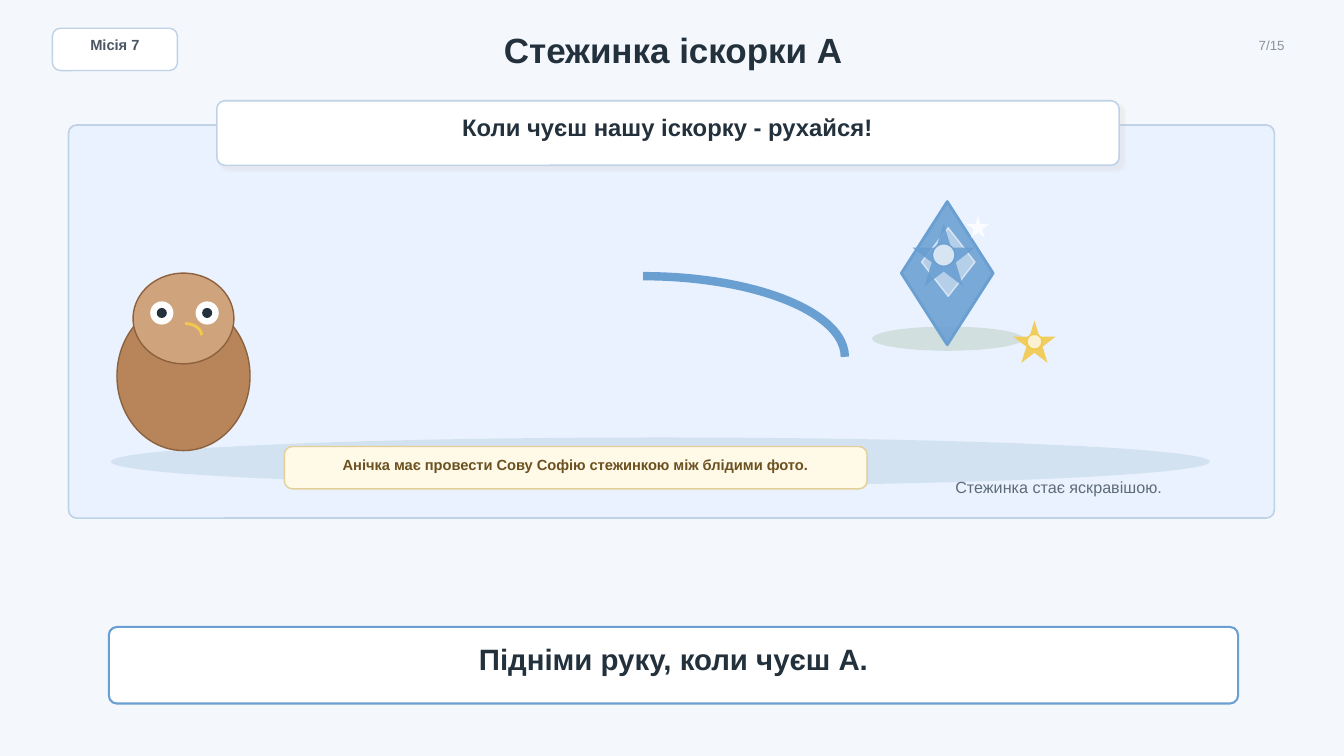
"""Builds the mission slide with an owl, a spark path and a crystal."""
from dataclasses import dataclass

from lxml.etree import SubElement
from pptx import Presentation
from pptx.dml.color import RGBColor
from pptx.enum.shapes import MSO_SHAPE
from pptx.enum.text import MSO_ANCHOR, PP_ALIGN
from pptx.oxml.ns import qn
from pptx.util import Inches, Pt


@dataclass(frozen=True)
class Theme:
    font: str = "Arial"
    page: str = "F4F7FC"
    white: str = "FFFFFF"
    ink: str = "23313D"
    badge: str = "4B5563"
    muted: str = "8A929A"
    caption: str = "5E6C78"
    edge: str = "BFD2E6"
    panel: str = "EAF2FF"
    ground: str = "D2E1EF"
    shade: str = "C9D9D5"
    spark: str = "6A9FD2"
    gold: str = "F2C94C"
    body: str = "B8845A"
    head: str = "CFA47C"
    feather: str = "8C623E"
    note: str = "FFF9E8"
    note_edge: str = "E4CF98"
    note_ink: str = "6B5120"
    shadow: str = "C8C1B0"
    title_size: float = 25
    task_size: float = 21
    prompt_size: float = 17
    caption_size: float = 11.5
    small_size: float = 10.5
    number_size: float = 9.5


THEME = Theme()
CELL = Inches(0.1)
COLUMNS, ROWS = 133.3, 75
CORNER = 0.8
OVAL, DIAMOND = MSO_SHAPE.OVAL, MSO_SHAPE.DIAMOND
STAR, ARC = MSO_SHAPE.STAR_5_POINT, MSO_SHAPE.ARC

BADGE = (5.2, 2.8, 12.4, 4.2)
PANEL = (6.8, 12.4, 119.6, 39)
PROMPT = (21.5, 10, 89.5, 6.4)
NOTE = (28.2, 44.3, 57.8, 4.2)
TASK = (10.8, 62.2, 112, 7.6)

TEXTS = [
    ("Місія 7", (6.2, 3.7, 10.4, 1.5),
     dict(size=THEME.small_size, color=THEME.badge, bold=True)),
    ("Стежинка іскорки А", (20, 2.5, 93.5, 4.8),
     dict(size=THEME.title_size, color=THEME.ink, bold=True)),
    ("7/15", (120.2, 3.7, 7.2, 1.6),
     dict(size=THEME.number_size, color=THEME.muted, align=PP_ALIGN.RIGHT)),
    ("Коли чуєш нашу іскорку - рухайся!", (23.8, 11.3, 84.8, 2.6),
     dict(size=THEME.prompt_size, color=THEME.ink, bold=True)),
    ("Анічка має провести Сову Софію стежинкою між блідими фото.",
     (29.8, 45.2, 54.6, 1.8),
     dict(size=THEME.small_size, color=THEME.note_ink, bold=True)),
    ("Підніми руку, коли чуєш А.", (13.4, 63.9, 106.8, 2.8),
     dict(size=THEME.task_size, color=THEME.ink, bold=True)),
    ("Стежинка стає яскравішою.", (90, 47.2, 30, 2.2),
     dict(size=THEME.caption_size, color=THEME.caption)),
]

OWL = [
    (OVAL, (11.6, 29.9, 13.2, 14.8), dict(fill=THEME.body, line=THEME.feather)),
    (OVAL, (13.2, 27.1, 10, 9), dict(fill=THEME.head, line=THEME.feather)),
]
EYE_CENTERS = [(16.05, 31.05), (20.55, 31.05)]
EYE_LAYERS = [(2.3, THEME.white), (1, THEME.ink)]
PATH = [
    (ARC, (16.7, 32.1, 3.3, 2.3), dict(line=THEME.gold, width=2)),
    (ARC, (43.8, 27.4, 40, 16), dict(line=THEME.spark, width=6)),
]
CRYSTAL = [
    (OVAL, (86.5, 32.4, 15, 2.4), dict(fill=THEME.shade, opacity=75)),
    (DIAMOND, (89.4, 20, 9.1, 14.2),
     dict(fill=THEME.spark, opacity=88, line=THEME.spark, width=2)),
    (DIAMOND, (91.4, 22.6, 5.3, 6.8),
     dict(fill=THEME.white, opacity=45, line=THEME.white, line_opacity=60)),
    (STAR, (95.9, 21.4, 2.2, 2.2), dict(fill=THEME.white, opacity=82)),
]
SPARKS = [((93.6, 25.3), 6.2, THEME.spark), ((102.6, 33.9), 4.2, THEME.gold)]
GLOW_SHARE = 0.36


def cells(at):
    return [round(value * CELL) for value in at]


def centered(center, size):
    return center[0] - size / 2, center[1] - size / 2, size, size


def paint(fill, color, opacity):
    fill.solid()
    fill.fore_color.rgb = RGBColor.from_string(color)
    if opacity < 100:
        choice = fill._xPr.find(qn("a:solidFill"))[0]
        SubElement(choice, qn("a:alpha"), val=str(opacity * 1000))


def add_figure(page, preset, at, fill=None, opacity=100, line=None, width=1, line_opacity=100):
    figure = page.shapes.add_shape(preset, *cells(at))
    figure.shadow.inherit = False
    if fill:
        paint(figure.fill, fill, opacity)
    else:
        figure.fill.background()
    if line:
        paint(figure.line.fill, line, line_opacity)
        figure.line.width = Pt(width)
    else:
        figure.line.fill.background()
    return figure


def add_card(page, at, **style):
    card = add_figure(page, MSO_SHAPE.ROUNDED_RECTANGLE, at, **style)
    card.adjustments[0] = CORNER / at[3]
    return card


def cast_shadow(card):
    effects = card._element.spPr.find(qn("a:effectLst"))
    outer = SubElement(effects, qn("a:outerShdw"), blurRad=str(Pt(1)), dist=str(Pt(4)),
                       dir=str(45 * 60000), algn="ctr", rotWithShape="0")
    color = SubElement(outer, qn("a:srgbClr"), val=THEME.shadow)
    SubElement(color, qn("a:alpha"), val="16000")


def add_text(page, text, at, size, color, bold=False, align=PP_ALIGN.CENTER):
    frame = page.shapes.add_textbox(*cells(at)).text_frame
    frame.word_wrap = True
    frame.vertical_anchor = MSO_ANCHOR.MIDDLE
    frame.margin_left = frame.margin_right = frame.margin_top = frame.margin_bottom = 0
    para = frame.paragraphs[0]
    para.alignment = align
    span = para.add_run()
    span.text = text
    span.font.name = THEME.font
    span.font.size = Pt(size)
    span.font.bold = bold
    span.font.color.rgb = RGBColor.from_string(color)


def add_scene(page):
    add_card(page, PANEL, fill=THEME.panel, line=THEME.edge, width=1.2)
    add_figure(page, OVAL, (11, 43.4, 109, 4.8), fill=THEME.ground, opacity=92)
    for preset, at, style in OWL:
        add_figure(page, preset, at, **style)
    for size, color in EYE_LAYERS:
        for center in EYE_CENTERS:
            add_figure(page, OVAL, centered(center, size), fill=color)
    for preset, at, style in PATH + CRYSTAL:
        add_figure(page, preset, at, **style)
    for center, size, color in SPARKS:
        add_figure(page, STAR, centered(center, size), fill=color, opacity=90)
        add_figure(page, OVAL, centered(center, size * GLOW_SHARE),
                   fill=THEME.white, opacity=72, line=color)


def main():
    deck = Presentation()
    deck.slide_width, deck.slide_height = cells((COLUMNS, ROWS))
    page = deck.slides.add_slide(deck.slide_layouts[6])
    paint(page.background.fill, THEME.page, 100)
    add_card(page, BADGE, fill=THEME.white, line=THEME.edge)
    add_scene(page)
    cast_shadow(add_card(page, PROMPT, fill=THEME.white, line=THEME.edge, width=1.1))
    add_card(page, NOTE, fill=THEME.note, line=THEME.note_edge)
    add_card(page, TASK, fill=THEME.white, line=THEME.spark, width=1.5)
    for text, at, style in TEXTS:
        add_text(page, text, at, **style)
    deck.save("out.pptx")


if __name__ == "__main__":
    main()
